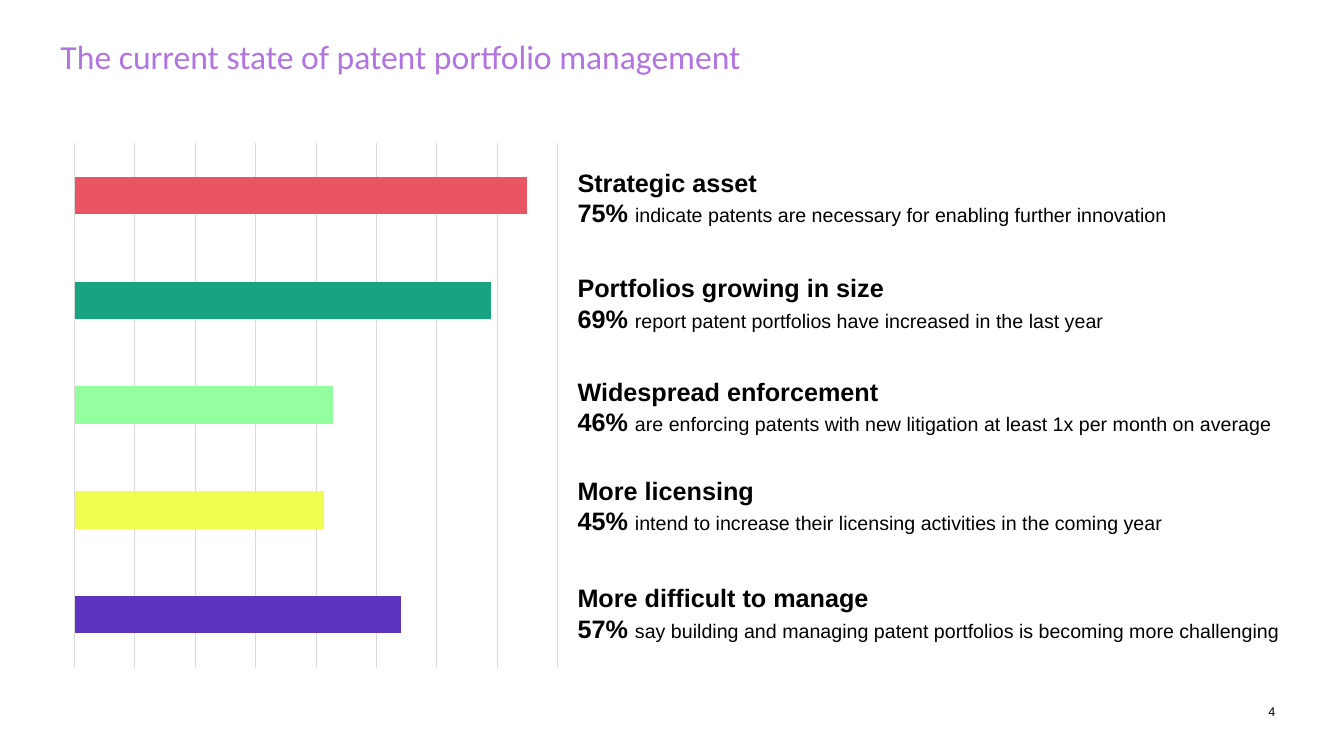
import pptx
import pptx.util
import pptx.chart.data
import pptx.dml.color
import pptx.enum.chart
import pptx.enum.text
from lxml import etree

Inches, Pt = pptx.util.Inches, pptx.util.Pt
RGBColor = pptx.dml.color.RGBColor

# Content
TITLE = "The current state of patent portfolio management"
PAGE_NUMBER = "4"
CORAL = RGBColor(0xEA, 0x55, 0x64)
TEAL = RGBColor(0x18, 0xA3, 0x81)
MINT = RGBColor(0x93, 0xFF, 0x9E)
YELLOW = RGBColor(0xF0, 0xFE, 0x4F)
VIOLET = RGBColor(0x5E, 0x33, 0xBF)
LILAC = RGBColor(0xB1, 0x75, 0xE1)
GRID_GRAY = RGBColor(0xD9, 0xD9, 0xD9)
BLACK = RGBColor(0, 0, 0)

# Heading, share, statement, (top, width, height) of its box
FINDINGS = [
    ("Strategic asset", "75%",
     "indicate patents are necessary for enabling further innovation", (1.6, 7.28, 0.71)),
    ("Portfolios growing in size", "69%",
     "report patent portfolios have increased in the last year", (2.65, 7.47, 0.71)),
    ("Widespread enforcement", "46%",
     "are enforcing patents with new litigation at least 1x per month on average",
     (3.68, 7.57, 0.71)),
    ("More licensing", "45%",
     "intend to increase their licensing activities in the coming year", (4.66, 7.47, 0.71)),
    ("More difficult to manage", "57%",
     "say building and managing patent portfolios is becoming more challenging",
     (5.59, 7.47, 0.98)),
]
# Bars from bottom to top
BARS = [(72, VIOLET), (55, YELLOW), (57, MINT), (92, TEAL), (100, CORAL)]
GRID_STEP, GRID_COUNT = 13.33, 8

# Page geometry in inches
CHART_LEFT, CHART_TOP, CHART_WIDTH, CHART_HEIGHT = 0.64, 1.31, 4.99, 5.42
FINDINGS_LEFT = CHART_LEFT + CHART_WIDTH
PLOT_MARGIN = 0.02


def place(shape, left, top, width, height):
    shape.left, shape.top = Inches(left), Inches(top)
    shape.width, shape.height = Inches(width), Inches(height)


def clear_margins(frame):
    frame.margin_left = frame.margin_right = 0
    frame.margin_top = frame.margin_bottom = 0


def style(font, size, color=BLACK, name="Arial", bold=False):
    font.size, font.name, font.bold = Pt(size), name, bold
    font.color.rgb = color


def add_text_frame(slide, left, top, width, height):
    box = slide.shapes.add_textbox(*map(Inches, (left, top, width, height)))
    frame = box.text_frame
    frame.word_wrap = True
    frame.vertical_anchor = pptx.enum.text.MSO_ANCHOR.MIDDLE
    return frame


def add_title(slide):
    title = slide.shapes.title
    place(title, 0.6, 0.4, 11.69, 0.28)
    frame = title.text_frame
    frame.text = TITLE
    clear_margins(frame)
    frame.vertical_anchor = pptx.enum.text.MSO_ANCHOR.TOP
    frame.auto_size = pptx.enum.text.MSO_AUTO_SIZE.NONE
    paragraph = frame.paragraphs[0]
    paragraph.alignment = pptx.enum.text.PP_ALIGN.LEFT
    paragraph.line_spacing = 0.9
    style(paragraph.font, 24, LILAC, "Calibri")


def add_bar_chart(slide):
    data = pptx.chart.data.CategoryChartData()
    data.categories = [str(number) for number in range(1, len(BARS) + 1)]
    data.add_series("Series 1", [value for value, _ in BARS])
    chart = slide.shapes.add_chart(
        pptx.enum.chart.XL_CHART_TYPE.BAR_CLUSTERED,
        *map(Inches, (CHART_LEFT, CHART_TOP, CHART_WIDTH, CHART_HEIGHT)), data).chart
    chart.has_legend = chart.has_title = False
    style(chart.font, 10)

    # Hidden axes with vertical grid lines
    chart.category_axis.visible = False
    axis = chart.value_axis
    axis.visible = False
    axis.minimum_scale, axis.maximum_scale = 0, GRID_STEP * GRID_COUNT
    axis.major_unit = GRID_STEP
    axis.has_major_gridlines = True
    grid_line = axis.major_gridlines.format.line
    grid_line.color.rgb, grid_line.width = GRID_GRAY, Pt(0.75)

    # Bar colours
    plot = chart.plots[0]
    plot.gap_width = 182
    plot.vary_by_categories = False
    series = plot.series[0]
    series.format.fill.solid()
    series.format.fill.fore_color.rgb = MINT
    for index, (_, color) in enumerate(BARS):
        fill = series.points[index].format.fill
        fill.solid()
        fill.fore_color.rgb = color

    # Plot area fills the frame up to an even margin
    plot_area = chart.element.chart.plotArea
    namespace = "{%s}" % plot_area.nsmap["c"]
    for old_layout in plot_area.findall(namespace + "layout"):
        plot_area.remove(old_layout)
    layout = etree.Element(namespace + "layout")
    manual = etree.SubElement(layout, namespace + "manualLayout")
    extent = 1 - 2 * PLOT_MARGIN
    for tag, value in [("layoutTarget", "inner"), ("xMode", "edge"), ("yMode", "edge"),
                       ("x", PLOT_MARGIN), ("y", PLOT_MARGIN), ("w", extent), ("h", extent)]:
        etree.SubElement(manual, namespace + tag).set("val", str(value))
    plot_area.insert(0, layout)


def add_finding(slide, heading, share, statement, box):
    top, width, height = box
    frame = add_text_frame(slide, FINDINGS_LEFT, top, width, height)
    frame.auto_size = pptx.enum.text.MSO_AUTO_SIZE.SHAPE_TO_FIT_TEXT
    frame.text = heading
    style(frame.paragraphs[0].font, 18, bold=True)
    detail = frame.add_paragraph()
    for text, size, bold in [(share + " ", 18, True), (statement, 14, False)]:
        run = detail.add_run()
        run.text = text
        style(run.font, size, bold=bold)


def main():
    presentation = pptx.Presentation()
    presentation.slide_width, presentation.slide_height = Inches(13.33), Inches(7.5)
    slide = presentation.slides.add_slide(presentation.slide_layouts.get_by_name("Title Only"))
    add_title(slide)

    # Page number
    frame = add_text_frame(slide, 12.58, 6.94, 0.24, 0.24)
    clear_margins(frame)
    frame.text = PAGE_NUMBER
    style(frame.paragraphs[0].font, 9)

    # Findings beside the bars
    for finding in FINDINGS:
        add_finding(slide, *finding)
    add_bar_chart(slide)
    presentation.save("out.pptx")


if __name__ == "__main__":
    main()
